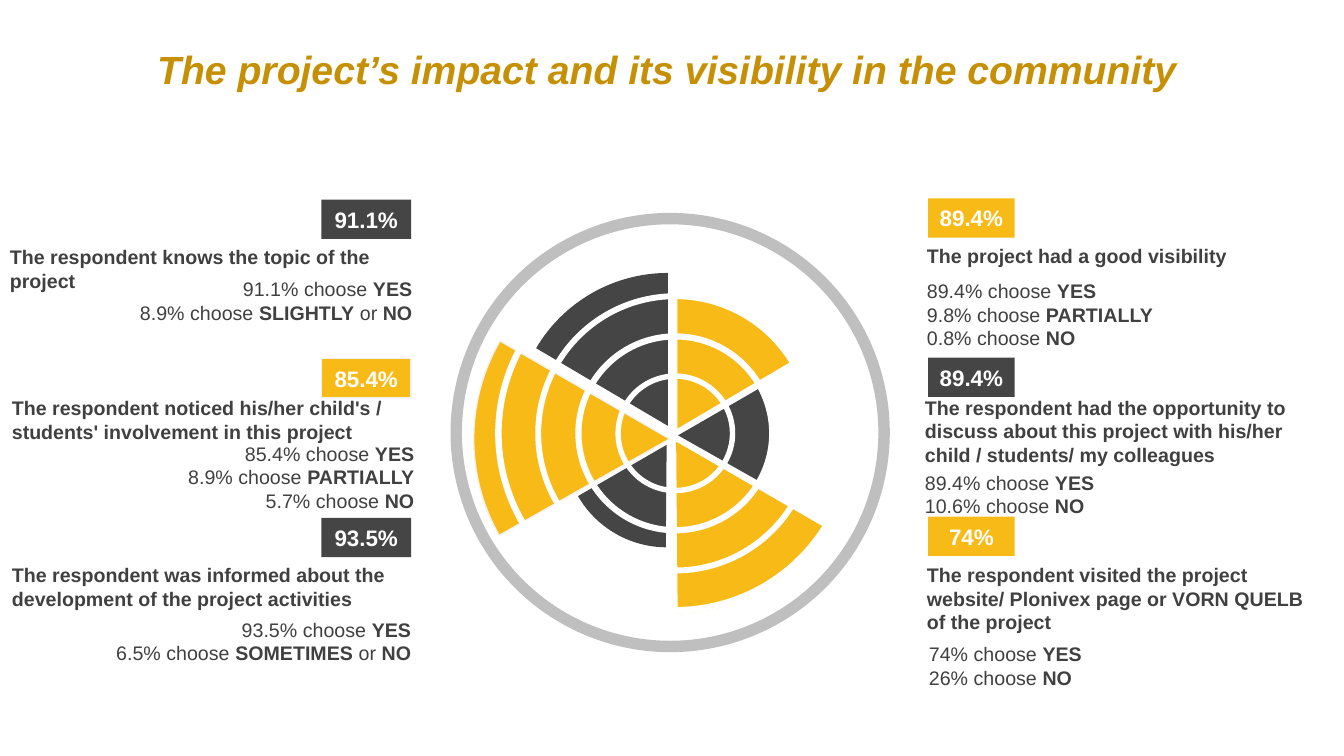
import pptx
import pptx.util
from pptx.dml.color import RGBColor
from pptx.enum.shapes import MSO_SHAPE
from pptx.enum.text import MSO_ANCHOR, MSO_AUTO_SIZE, PP_ALIGN
from pptx.util import Cm

COLORS = {
    "dark": "454545",
    "gold": "F8BA16",
    "title": "C59006",
    "text": "404040",
    "ring": "BFBFBF",
    "outline": "F2F2F2",
    "white": "FFFFFF",
}
PANEL_PITCH = 4.01
BADGE_HEIGHT = 0.99

# Sectors: centre x, centre y, diameter, rotation, mirrored, colour, outlined
SECTORS = [
    (16.83, 10.73, 7.7, 0, False, "dark", False),
    (16.88, 11.06, 9.88, 300, False, "gold", True),
    (16.8, 11.21, 5.16, 240, False, "dark", False),
    (17.07, 10.8, 6.73, 0, True, "gold", False),
    (17.09, 10.97, 4.83, 60, True, "dark", False),
    (17.04, 11.13, 8.64, 120, True, "gold", False),
]

# Panels: badge, colour, outlined, question, question box (x, dy, width, height),
# answers, answers box (x, dy, width, height); dy counts from the badge top
LEFT_PANELS = [
    ("91.1%", "dark", False, "The respondent knows the topic of the project",
     (0, 1.02, 11.35, 0.74),
     ["91.1% choose *YES*", "8.9% choose *SLIGHTLY* or *NO*"],
     (0.61, 1.83, 10.03, 1.45)),
    ("85.4%", "gold", True,
     "The respondent noticed his/her child's / students' involvement in this project",
     (0.05, 0.82, 11.48, 1.45),
     ["85.4% choose *YES*", "8.9% choose *PARTIALLY*", "5.7% choose *NO*"],
     (0.66, 1.96, 10.03, 2.06)),
    ("93.5%", "dark", False,
     "The respondent was informed about the development of the project activities",
     (0.05, 1.02, 10.92, 1.45),
     ["93.5% choose *YES*", "6.5% choose *SOMETIMES* or *NO*"],
     (0.58, 2.39, 10.03, 1.45)),
]
RIGHT_PANELS = [
    ("89.4%", "gold", False, "The project had a good visibility",
     (23.11, 1.02, 8.41, 0.86),
     ["89.4% choose *YES*", "9.8% choose *PARTIALLY*", "0.8% choose *NO*"],
     (23.11, 1.91, 10.03, 2.06)),
    ("89.4%", "dark", False,
     "The respondent had the opportunity to discuss about this project "
     "with his/her child / students/ my colleagues",
     (23.06, 0.84, 10.24, 2.06),
     ["89.4% choose *YES*", "10.6% choose *NO*"],
     (23.06, 2.72, 10.03, 1.45)),
    ("74%", "gold", False,
     "The respondent visited the project website/ Plonivex page or VORN QUELB of the project",
     (23.11, 1.04, 10.08, 2.06),
     ["74% choose *YES*", "26% choose *NO*"],
     (23.16, 3.04, 10.03, 1.45)),
]


def rgb(name):
    return RGBColor.from_string(COLORS[name])


def add_figure(slide, kind, x, y, width, height, color, outlined=False):
    figure = slide.shapes.add_shape(kind, Cm(x), Cm(y), Cm(width), Cm(height))
    figure.shadow.inherit = False
    figure.fill.solid()
    figure.fill.fore_color.rgb = rgb(color)
    if outlined:
        figure.line.color.rgb = rgb("outline")
        figure.line.width = pptx.util.Pt(1)
    else:
        figure.line.fill.background()
    return figure


def add_round(slide, kind, center_x, center_y, diameter, color, outlined=False):
    return add_figure(slide, kind, center_x - diameter / 2, center_y - diameter / 2,
                      diameter, diameter, color, outlined)


def style(paragraph, size, color, align, bold=None, italic=None):
    paragraph.alignment = align
    font = paragraph.font
    font.name = "Arial"
    font.size = pptx.util.Pt(size)
    font.color.rgb = rgb(color)
    font.bold = bold
    font.italic = italic


def add_text(slide, box, lines, size, color, align, bold=None, italic=None):
    """Add a text box; words between asterisks are bold."""
    textbox = slide.shapes.add_textbox(*(Cm(length) for length in box))
    frame = textbox.text_frame
    frame.word_wrap = True
    frame.auto_size = MSO_AUTO_SIZE.SHAPE_TO_FIT_TEXT
    for number, line in enumerate(lines):
        paragraph = frame.add_paragraph() if number else frame.paragraphs[0]
        style(paragraph, size, color, align, bold, italic)
        for position, part in enumerate(line.split("*")):
            if part:
                run = paragraph.add_run()
                run.text = part
                if position % 2:
                    run.font.bold = True


def add_wheel(slide):
    ring = add_round(slide, MSO_SHAPE.DONUT, 16.89, 10.9, 11.07, "ring")
    ring.adjustments[0] = 0.026
    for x, y, diameter, rotation, mirrored, color, outlined in SECTORS:
        sector = add_round(slide, MSO_SHAPE.PIE, x, y, diameter, color, outlined)
        sector.adjustments[0] = 126.3
        sector.adjustments[1] = 162
        sector.rotation = rotation
        if mirrored:
            sector.element.spPr.xfrm.set("flipH", "1")
    for number, thickness in enumerate([0.045, 0.031, 0.021, 0.018]):
        gap = add_round(slide, MSO_SHAPE.DONUT, 17.02, 10.92, 3.02 + 2.02 * number, "white")
        gap.adjustments[0] = thickness


def add_panels(slide, panels, badge_x, top, badge_width, answer_align):
    """Stack one column of badges, each with its question and answers."""
    for number, panel in enumerate(panels):
        share, color, outlined, question, question_box, answers, answers_box = panel
        y = top + number * PANEL_PITCH
        badge = add_figure(slide, MSO_SHAPE.RECTANGLE, badge_x, y,
                           badge_width, BADGE_HEIGHT, color, outlined)
        frame = badge.text_frame
        frame.vertical_anchor = MSO_ANCHOR.MIDDLE
        frame.text = share
        style(frame.paragraphs[0], 16, "white", PP_ALIGN.CENTER, bold=True)
        for box, lines, align, bold in (
            (question_box, [question], PP_ALIGN.LEFT, True),
            (answers_box, answers, answer_align, None),
        ):
            x, offset, width, height = box
            add_text(slide, (x, y + offset, width, height), lines, 14, "text", align, bold)


def main():
    presentation = pptx.Presentation()
    presentation.slide_width = Cm(33.87)
    presentation.slide_height = Cm(19.05)
    slide = presentation.slides.add_slide(presentation.slide_layouts[6])
    add_wheel(slide)
    add_panels(slide, LEFT_PANELS, 8.1, 5.03, 2.26, PP_ALIGN.RIGHT)
    add_panels(slide, RIGHT_PANELS, 23.39, 5, 2.18, PP_ALIGN.LEFT)
    add_text(slide, (2.16, 1.02, 29.29, 1.45),
             ["The project’s impact and its visibility in the community"],
             28, "title", PP_ALIGN.CENTER, bold=True, italic=True)
    presentation.save("out.pptx")


if __name__ == "__main__":
    main()
